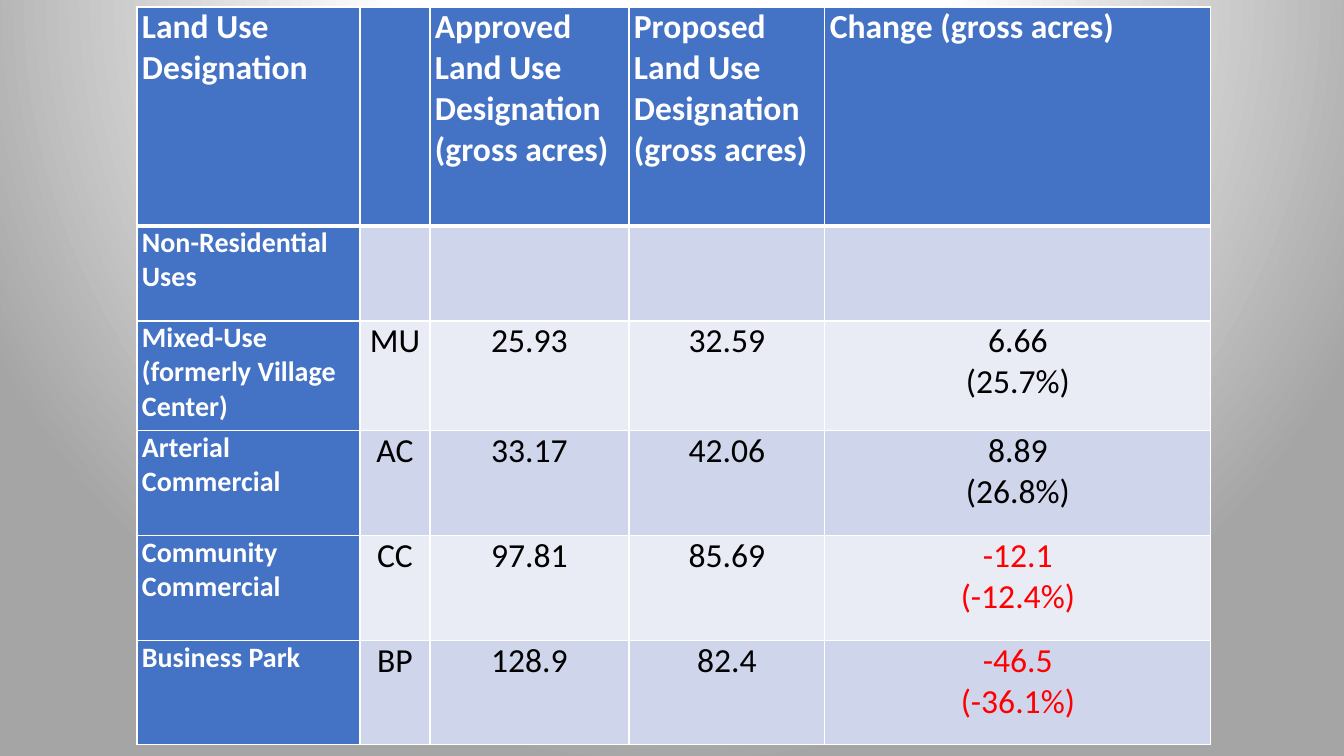
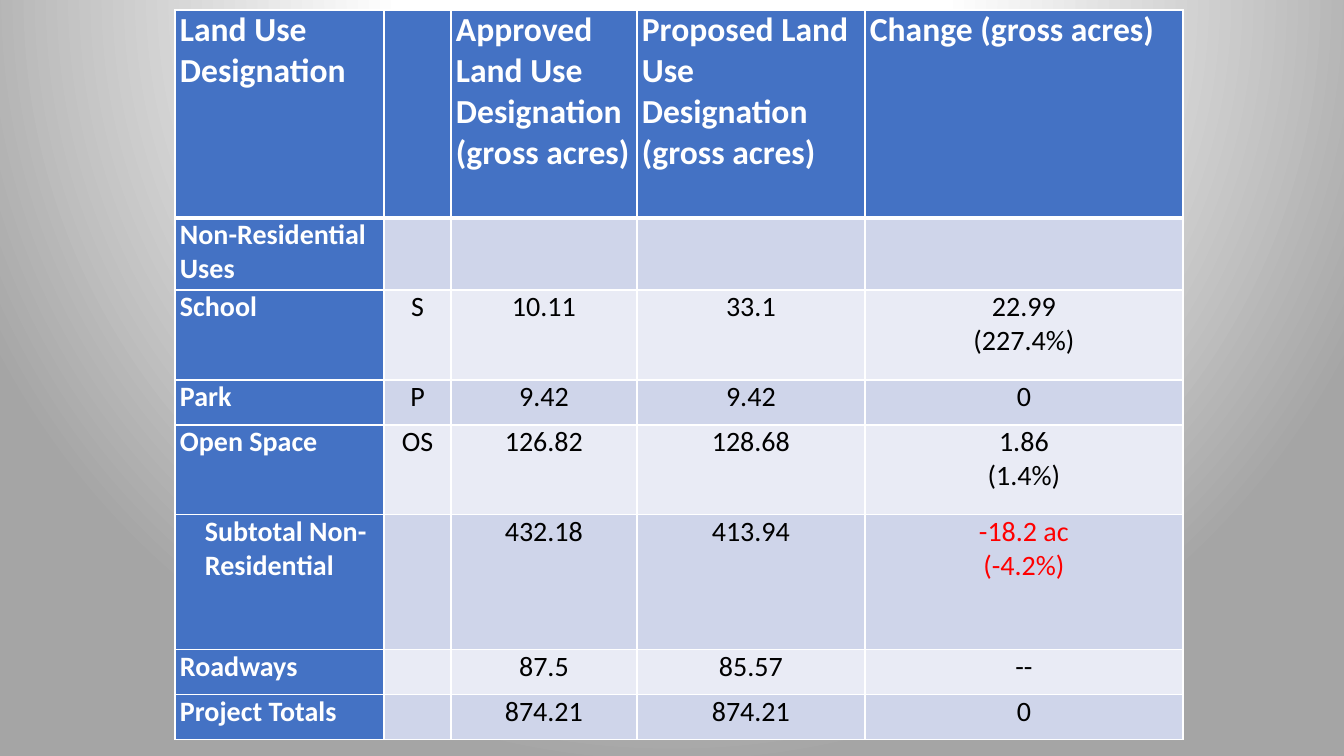
from dataclasses import dataclass

from lxml import etree
from pptx import Presentation
from pptx import util as u
from pptx.dml import color as c
from pptx.enum import text as t
from pptx.oxml import ns, parse_xml

WIDE, HIGH = 1344, 756
SCALE = 12192000 / WIDE


def px(n):
    return u.Emu(round(n * SCALE))


@dataclass(frozen=True)
class Theme:
    font: str = "Calibri"
    head: str = "4472C4"
    bands: tuple = ("CFD5EA", "E9EBF5")
    light: str = "FFFFFF"
    dark: str = "000000"
    loss: str = "FF0000"
    edge: str = "A5A5A5"
    big: int = 24
    small: int = 20
    thin: int = 1
    thick: int = 3
    pad: int = 5
    inset: int = 25


T = Theme()

TITLES = ("Land Use Designation", "",
          "Approved Land Use Designation\n(gross acres)",
          "Proposed Land Use Designation (gross acres)",
          "Change (gross acres)")
GROUP = ("Non-Residential Uses", "", "", "", "")

TRADE = (
    ("Mixed-Use (formerly Village Center)", "MU", "25.93", "32.59", "6.66\n(25.7%)"),
    ("Arterial Commercial", "AC", "33.17", "42.06", "8.89\n(26.8%)"),
    ("Community Commercial", "CC", "97.81", "85.69", "-12.1\n(-12.4%)"),
    ("Business Park", "BP", "128.9", "82.4", "-46.5\n(-36.1%)"),
)
CIVIC = (
    ("School", "S", "10.11", "33.1", "22.99\n(227.4%)"),
    ("Park", "P", "9.42", "9.42", "0"),
    ("Open Space", "OS", "126.82", "128.68", "1.86\n(1.4%)"),
    ("Subtotal Non-Residential", "", "432.18", "413.94", "-18.2 ac\n(-4.2%)"),
    ("Roadways", "", "87.5", "85.57", "--"),
    ("Project Totals", "", "874.21", "874.21", "0"),
)


def write(frame, text, size, color, bold=False, align=t.PP_ALIGN.LEFT, indent=0):
    """Fill a text frame, one paragraph for each line of text."""
    for i, line in enumerate(text.split("\n")):
        para = frame.add_paragraph() if i else frame.paragraphs[0]
        para.alignment = align
        if indent:
            para._p.get_or_add_pPr().set("marL", str(px(indent)))
        run = para.add_run()
        run.text = line
        font = run.font
        font.name, font.size, font.bold = T.font, u.Pt(size), bold
        font.color.rgb = c.RGBColor.from_string(color)


def glow(master):
    """Give every slide the same radial background."""
    master.background.fill.solid()
    back = master.element.find(".//" + ns.qn("p:bgPr"))
    stops = "".join(
        f'<a:gs pos="{pos}"><a:srgbClr val="{tint}"/></a:gs>'
        for pos, tint in ((0, T.light), (35000, T.light), (100000, T.edge)))
    back.replace(back[0], parse_xml(
        f'<a:gradFill {ns.nsdecls("a")} rotWithShape="1"><a:gsLst>{stops}</a:gsLst>'
        '<a:path path="circle"><a:fillToRect l="50000" t="-80000" r="50000" b="180000"/>'
        '</a:path></a:gradFill>'))


def frame_cell(cell, top, base):
    """Draw the four cell borders, which precede the fill."""
    props = cell._tc.get_or_add_tcPr()
    widths = (("L", T.thin), ("R", T.thin), ("T", top), ("B", base))
    for i, (side, width) in enumerate(widths):
        line = etree.Element(ns.qn("a:ln" + side), w=str(u.Pt(width)))
        fill = etree.SubElement(line, ns.qn("a:solidFill"))
        etree.SubElement(fill, ns.qn("a:srgbClr"), val=T.light)
        props.insert(i, line)


def style(row, col, text):
    """Return the text format that suits a cell's place and value."""
    if row == 0:
        return dict(size=T.big, color=T.light, bold=True)
    if col == 0:
        indent = T.inset if text.startswith("Subtotal") else 0
        return dict(size=T.small, color=T.light, bold=True, indent=indent)
    loss = text.startswith("-") and text != "--"
    return dict(color=T.loss if loss else T.dark, align=t.PP_ALIGN.CENTER)


def grid(slide, left, top, cols, rows, data, size):
    """Place a land use table with its top left corner at the given point."""
    data = (TITLES, GROUP) + data
    table = slide.shapes.add_table(
        len(rows), len(cols), px(left), px(top), px(sum(cols)), px(sum(rows))).table
    table.first_row = table.horz_banding = False
    for col, width in zip(table.columns, cols):
        col.width = px(width)
    for r, (row, height) in enumerate(zip(table.rows, rows)):
        row.height = px(height)
        for k, (cell, text) in enumerate(zip(row.cells, data[r])):
            cell.margin_left = cell.margin_right = px(T.pad)
            cell.margin_top = cell.margin_bottom = 0
            cell.fill.solid()
            fill = T.head if r == 0 or k == 0 else T.bands[(r - 1) % 2]
            cell.fill.fore_color.rgb = c.RGBColor.from_string(fill)
            frame_cell(cell, T.thick if r == 1 else T.thin, T.thick if r == 0 else T.thin)
            if text:
                write(cell.text_frame, text, **{"size": size, **style(r, k, text)})


def main():
    deck = Presentation()
    deck.slide_width, deck.slide_height = px(WIDE), px(HIGH)
    glow(deck.slide_master)
    blank = deck.slide_layouts[6]

    # Commercial uses
    grid(deck.slides.add_slide(blank), 137, 7, (223, 70, 199, 196, 386),
         (219, 95, 110, 105, 105, 104), TRADE, T.big)

    # Civic uses and totals
    grid(deck.slides.add_slide(blank), 175, 10, (209, 67, 186, 228, 318),
         (208, 72, 90, 45, 90, 135, 45, 45), CIVIC, T.small)

    deck.save("out.pptx")


if __name__ == "__main__":
    main()
